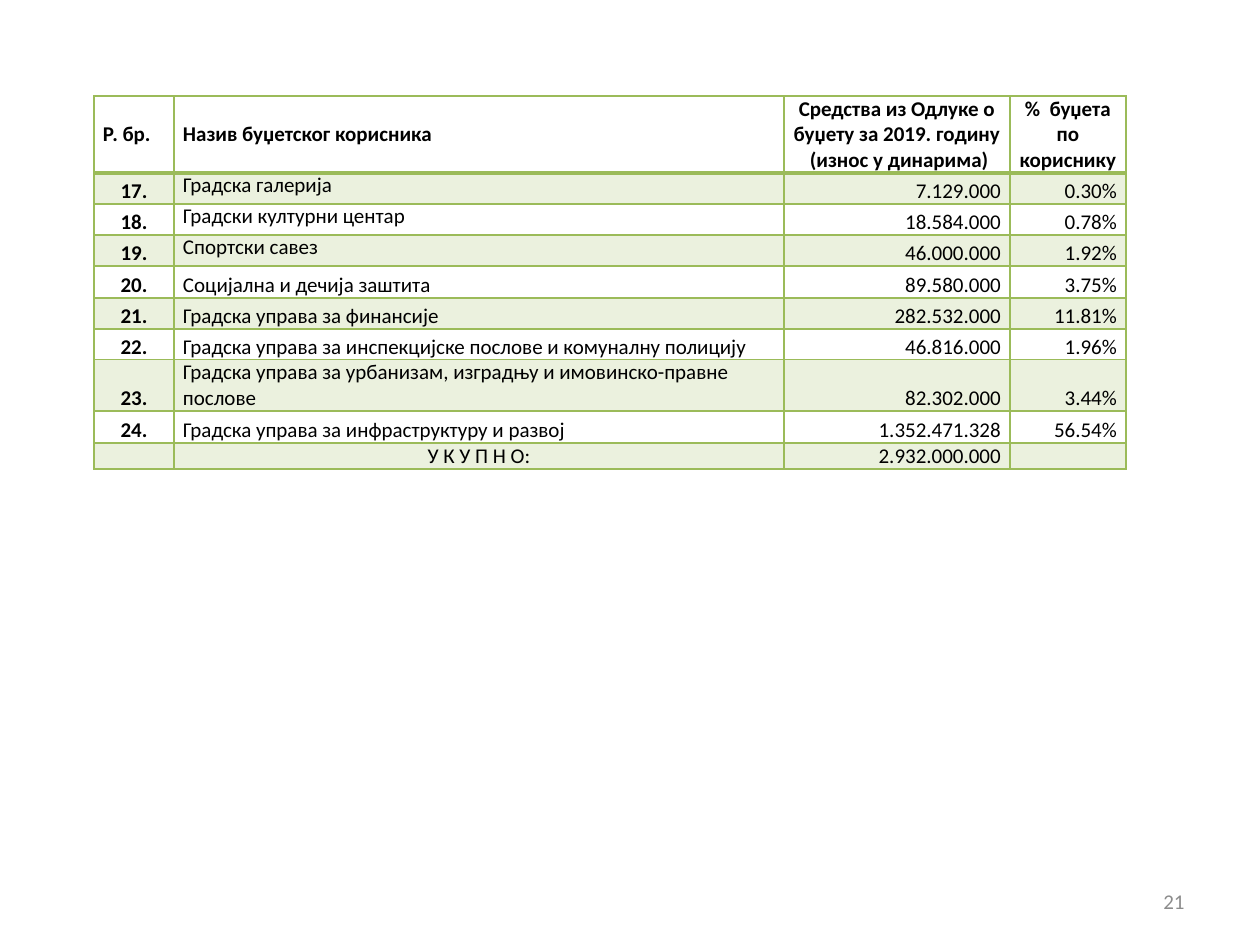
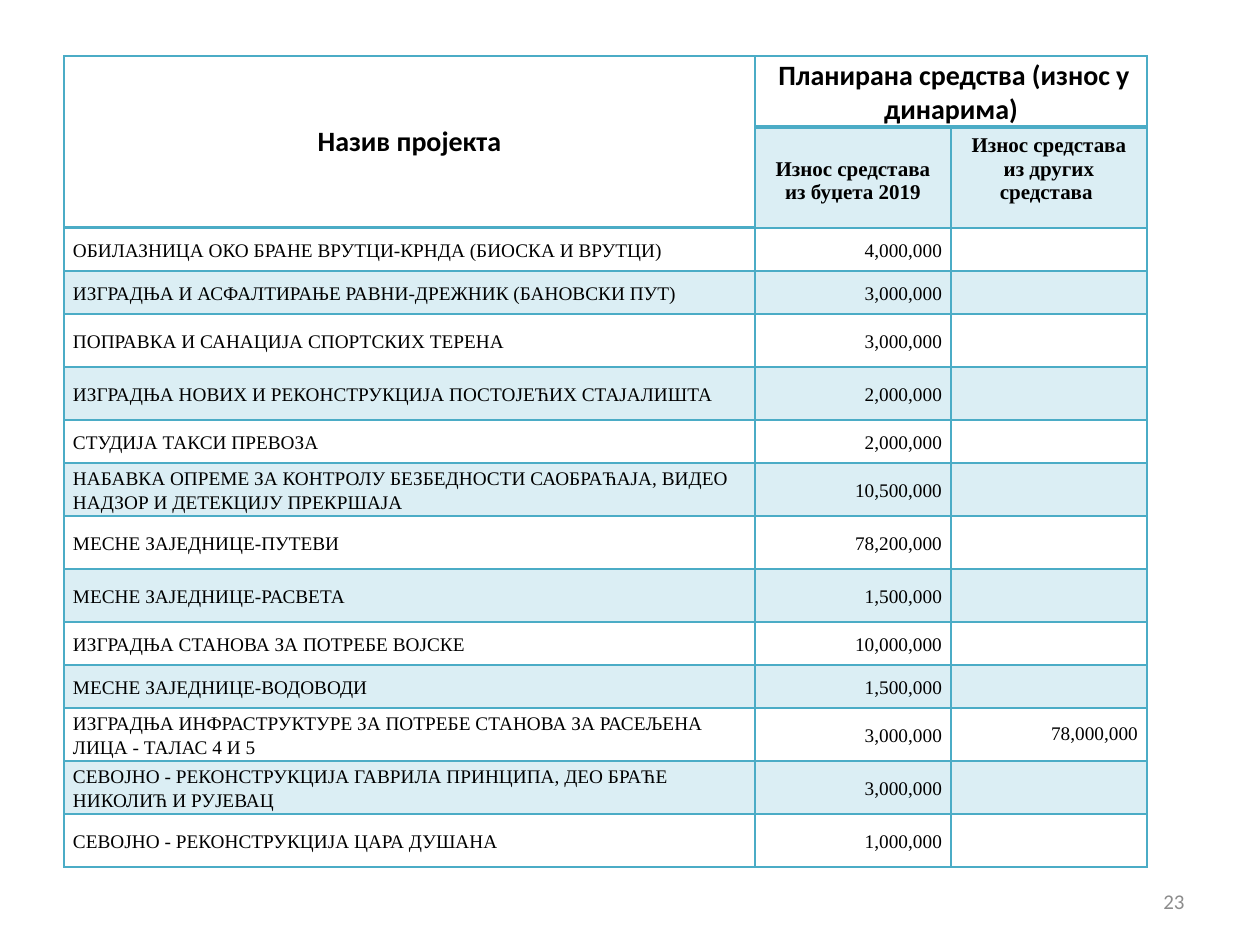
from lxml import etree
from pptx import Presentation
from pptx.dml.color import RGBColor
from pptx.enum.text import MSO_ANCHOR, PP_ALIGN
from pptx.oxml.ns import qn
from pptx.util import Pt

PX = 914400 // 126
LEFT, CENTER, RIGHT, JUSTIFY = PP_ALIGN.LEFT, PP_ALIGN.CENTER, PP_ALIGN.RIGHT, PP_ALIGN.JUSTIFY
TOP, MIDDLE, BOTTOM = MSO_ANCHOR.TOP, MSO_ANCHOR.MIDDLE, MSO_ANCHOR.BOTTOM
BLACK = RGBColor(0x00, 0x00, 0x00)
WHITE = RGBColor(0xFF, 0xFF, 0xFF)
GRAY = RGBColor(0x8C, 0x8C, 0x8C)
GREEN = RGBColor(0x9B, 0xBB, 0x59)
PALE_GREEN = RGBColor(0xEB, 0xF1, 0xDE)
TEAL = RGBColor(0x4B, 0xAC, 0xC6)
PALE_TEAL = RGBColor(0xDB, 0xEE, 0xF4)
SANS, SERIF = "Calibri", "Times New Roman"
CELL_MARGIN = 9
THIN, THICK = 1, 2

BUDGET_HEADER = [
    "Р. бр.",
    "Назив буџетског корисника",
    "Средства из Одлуке о буџету за 2019. годину  (износ у динарима)",
    "%  буџета по кориснику",
]
BUDGET_USERS = [
    ("17.", "Градска галерија", "7.129.000", "0.30%"),
    ("18.", "Градски културни центар", "18.584.000", "0.78%"),
    ("19.", "Спортски савез", "46.000.000", "1.92%"),
    ("20.", "Социјална и дечија заштита", "89.580.000", "3.75%"),
    ("21.", "Градска управа за финансије", "282.532.000", "11.81%"),
    ("22.", "Градска управа за инспекцијске послове и комуналну полицију", "46.816.000", "1.96%"),
    ("23.", "Градска управа за урбанизам, изградњу и имовинско-правне послове", "82.302.000", "3.44%"),
    ("24.", "Градска управа за инфраструктуру и развој", "1.352.471.328", "56.54%"),
]
BUDGET_TOTAL = ("", "У К У П Н О:", "2.932.000.000", "")
BUDGET_COLUMNS = [80, 610, 226, 116]
BUDGET_ROWS = [77, 31, 31, 31, 32, 31, 31, 51, 32, 26]
TOP_ANCHORED_USERS = 3

PROJECT_HEADER = "Назив пројекта"
FUNDS_HEADER = " Планирана средства (износ у динарима)"
FUNDS_SUBHEADERS = ["Износ средстава\nиз буџета 2019", "Износ средстава из других средстава "]
PROJECTS = [
    ("ОБИЛАЗНИЦА ОКО БРАНЕ ВРУТЦИ-КРНДА (БИОСКА И ВРУТЦИ)", "4,000,000", ""),
    ("ИЗГРАДЊА И АСФАЛТИРАЊЕ РАВНИ-ДРЕЖНИК (БАНОВСКИ ПУТ)", "3,000,000", ""),
    ("ПОПРАВКА И САНАЦИЈА СПОРТСКИХ ТЕРЕНА", "3,000,000", ""),
    ("ИЗГРАДЊА НОВИХ И РЕКОНСТРУКЦИЈА ПОСТОЈЕЋИХ СТАЈАЛИШТА", "2,000,000", ""),
    ("СТУДИЈА ТАКСИ ПРЕВОЗА", "2,000,000", ""),
    ("НАБАВКА ОПРЕМЕ ЗА КОНТРОЛУ БЕЗБЕДНОСТИ САОБРАЋАЈА, ВИДЕО НАДЗОР И ДЕТЕКЦИЈУ ПРЕКРШАЈА",
     "10,500,000", ""),
    ("МЕСНЕ ЗАЈЕДНИЦЕ-ПУТЕВИ", "78,200,000", ""),
    ("МЕСНЕ ЗАЈЕДНИЦЕ-РАСВЕТА", "1,500,000", ""),
    ("ИЗГРАДЊА СТАНОВА ЗА ПОТРЕБЕ ВОЈСКЕ", "10,000,000", ""),
    ("МЕСНЕ ЗАЈЕДНИЦЕ-ВОДОВОДИ", "1,500,000", ""),
    ("ИЗГРАДЊА ИНФРАСТРУКТУРЕ ЗА ПОТРЕБЕ СТАНОВА ЗА РАСЕЉЕНА ЛИЦА - ТАЛАС 4 И 5",
     "3,000,000", "78,000,000"),
    ("СЕВОЈНО - РЕКОНСТРУКЦИЈА ГАВРИЛА ПРИНЦИПА, ДЕО БРАЋЕ НИКОЛИЋ И РУЈЕВАЦ", "3,000,000", ""),
    ("СЕВОЈНО - РЕКОНСТРУКЦИЈА ЦАРА ДУШАНА", "1,000,000", ""),
]
PROJECT_COLUMNS = [691, 196, 196]
PROJECT_ROWS = [71, 101, 43, 43, 53, 53, 43, 50, 53, 53, 43, 43, 53, 49, 53]
SUBHEADER_BOTTOM = 24


def add_page_number(slide, number):
    box = slide.shapes.add_textbox(903 * PX, 876 * PX, 294 * PX, 50 * PX)
    frame = box.text_frame
    frame.word_wrap = True
    frame.vertical_anchor = MIDDLE
    frame.text = number
    style_paragraph(frame.paragraphs[0], RIGHT, 12, SANS, color=GRAY)


def style_paragraph(paragraph, align, size, font, bold=False, color=BLACK, spacing=None):
    paragraph.alignment = align
    paragraph.line_spacing = spacing
    for run in paragraph.runs:
        run.font.size = Pt(size)
        run.font.name = font
        run.font.bold = bold
        run.font.color.rgb = color
    if not paragraph.runs:
        etree.SubElement(paragraph._p, qn("a:endParaRPr"), sz=str(size * 100))


def write_cell(cell, text, align, anchor, size=12, font=SANS, bold=False, spacing=None, bottom=0):
    cell.text = text
    cell.vertical_anchor = anchor
    cell.margin_left = cell.margin_right = CELL_MARGIN * PX
    cell.margin_top, cell.margin_bottom = 0, bottom * PX
    for paragraph in cell.text_frame.paragraphs:
        style_paragraph(paragraph, align, size, font, bold, spacing=spacing)


def add_border(cell, side, points, color):
    properties = cell._tc.get_or_add_tcPr()
    line = etree.SubElement(properties, qn("a:ln" + side), w=str(Pt(points)))
    fill = etree.SubElement(line, qn("a:solidFill"))
    etree.SubElement(fill, qn("a:srgbClr"), val=str(color))


def add_grid(slide, left, top, columns, rows, line_color, band_color, thick_edges):
    """Add a banded table; thick_edges holds (row edge, column) pairs below headers."""
    table = slide.shapes.add_table(
        len(rows), len(columns), left * PX, top * PX, sum(columns) * PX, sum(rows) * PX).table
    table.first_row = table.horz_banding = False
    for column, width in zip(table.columns, columns):
        column.width = width * PX
    for row, height in zip(table.rows, rows):
        row.height = height * PX
    for r in range(len(rows)):
        for c in range(len(columns)):
            cell = table.cell(r, c)
            upper, lower = (THICK if (edge, c) in thick_edges else THIN for edge in (r, r + 1))
            for side, points in (("L", THIN), ("R", THIN), ("T", upper), ("B", lower)):
                add_border(cell, side, points, line_color)
            cell.fill.solid()
            cell.fill.fore_color.rgb = band_color if r % 2 else WHITE
    return table


def build_budget_slide(slide):
    edges = {(1, c) for c in range(len(BUDGET_COLUMNS))}
    table = add_grid(slide, 94, 96, BUDGET_COLUMNS, BUDGET_ROWS, GREEN, PALE_GREEN, edges)
    for c, (heading, align) in enumerate(zip(BUDGET_HEADER, (LEFT, LEFT, CENTER, CENTER))):
        write_cell(table.cell(0, c), heading, align, MIDDLE, bold=True)
    for r, user in enumerate(BUDGET_USERS, start=1):
        on_top = r <= TOP_ANCHORED_USERS
        aligns = (CENTER, JUSTIFY if on_top else LEFT, RIGHT, RIGHT)
        for c, (text, align) in enumerate(zip(user, aligns)):
            anchor = TOP if on_top and c == 1 else BOTTOM
            write_cell(table.cell(r, c), text, align, anchor, bold=c == 0)
    for c, (text, align) in enumerate(zip(BUDGET_TOTAL, (CENTER, CENTER, RIGHT, RIGHT))):
        write_cell(table.cell(len(BUDGET_USERS) + 1, c), text, align, BOTTOM)
    add_page_number(slide, "21")


def build_projects_slide(slide):
    edges = {(1, 0), (2, 0), (1, 1), (1, 2)}
    table = add_grid(slide, 64, 56, PROJECT_COLUMNS, PROJECT_ROWS, TEAL, PALE_TEAL, edges)
    table.cell(0, 0).merge(table.cell(1, 0))
    table.cell(0, 1).merge(table.cell(0, 2))
    write_cell(table.cell(0, 0), PROJECT_HEADER, CENTER, MIDDLE, 16, bold=True)
    write_cell(table.cell(0, 1), FUNDS_HEADER, CENTER, BOTTOM, 16, bold=True)
    for c, heading in enumerate(FUNDS_SUBHEADERS, start=1):
        write_cell(table.cell(1, c), heading, CENTER, BOTTOM, 12, SERIF, True, bottom=SUBHEADER_BOTTOM)
    for r, project in enumerate(PROJECTS, start=2):
        for c, (text, align) in enumerate(zip(project, (LEFT, RIGHT, RIGHT))):
            spacing = 1.15 if c < 2 else None
            write_cell(table.cell(r, c), text, align, MIDDLE, 11, SERIF, spacing=spacing)
    add_page_number(slide, "23")


def main():
    deck = Presentation()
    deck.slide_width, deck.slide_height = 1260 * PX, 945 * PX
    blank = deck.slide_layouts[6]
    for build in (build_budget_slide, build_projects_slide):
        build(deck.slides.add_slide(blank))
    deck.save("out.pptx")


if __name__ == "__main__":
    main()
